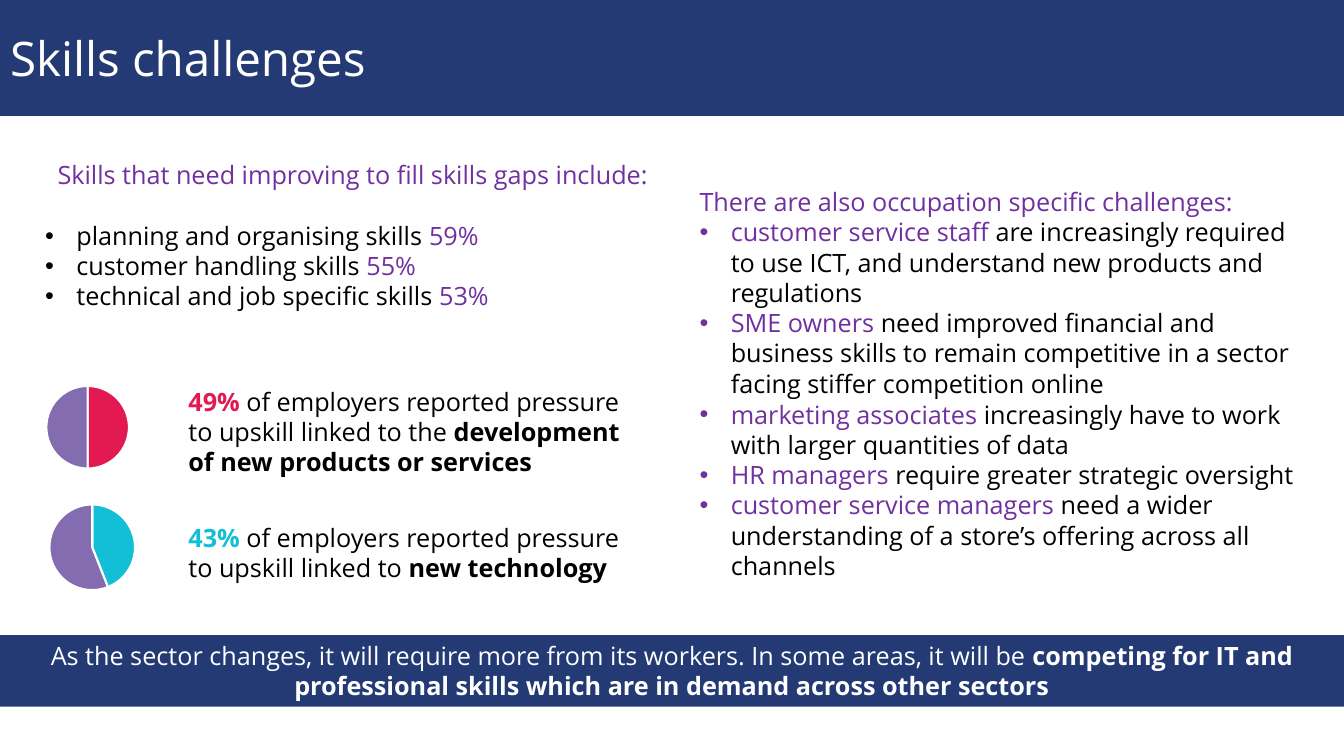
from lxml import etree
from pptx import Presentation
from pptx.chart.data import CategoryChartData
from pptx.dml.color import RGBColor
from pptx.enum.chart import XL_CHART_TYPE
from pptx.enum.shapes import MSO_SHAPE
from pptx.enum.text import MSO_ANCHOR, MSO_AUTO_SIZE, PP_ALIGN
from pptx.oxml import parse_xml
from pptx.oxml.ns import nsdecls, qn
from pptx.util import Inches, Pt

FONT = "Open Sans"
WIDTH, HEIGHT = 13.33, 7.5
COLORS = {name: RGBColor.from_string(value) for name, value in {
    "navy": "233A75", "white": "FFFFFF", "black": "000000", "purple": "7030A0",
    "red": "E31A52", "cyan": "12BFD6", "violet": "836DB0",
}.items()}

presentation = Presentation()
presentation.slide_width, presentation.slide_height = Inches(WIDTH), Inches(HEIGHT)
slide = presentation.slides.add_slide(presentation.slide_layouts[5])


def add_runs(paragraph, runs, size=18):
    """Append (text, color name, bold) runs to the paragraph."""
    for text, color, bold in runs:
        run = paragraph.add_run()
        run.text = text
        run.font.name = FONT
        run.font.size = Pt(size)
        run.font.bold = bold
        run.font.color.rgb = COLORS[color]


def add_text(left, top, width, height, heading, bullets=()):
    """Add a text box with an optional heading paragraph, then bulleted ones."""
    frame = slide.shapes.add_textbox(
        Inches(left), Inches(top), Inches(width), Inches(height)).text_frame
    frame.word_wrap = True
    paragraph = frame.paragraphs[0]
    add_runs(paragraph, heading)
    for index, runs in enumerate(bullets):
        if heading or index:
            paragraph = frame.add_paragraph()
        add_runs(paragraph, runs)
        properties = paragraph._p.get_or_add_pPr()
        properties.set("marL", str(Inches(0.31)))
        properties.set("indent", str(-Inches(0.31)))
        etree.SubElement(properties, qn("a:buFont")).set("typeface", "Arial")
        etree.SubElement(properties, qn("a:buChar")).set("char", "•")
    return frame


# Title band
title = slide.shapes.title
title.left = title.top = 0
title.width, title.height = Inches(WIDTH), Inches(1.15)
title.fill.solid()
title.fill.fore_color.rgb = COLORS["navy"]
title.text_frame.auto_size = MSO_AUTO_SIZE.NONE
title.text_frame.vertical_anchor = MSO_ANCHOR.MIDDLE
title.text_frame.paragraphs[0].alignment = PP_ALIGN.LEFT
add_runs(title.text_frame.paragraphs[0], [("Skills challenges", "white", False)], 34)

# Skills gaps
gaps = [("planning and organising skills ", "59%"),
        ("customer handling skills ", "55%"),
        ("technical and job specific skills ", "53%")]
gaps_frame = add_text(
    0.35, 1.53, 6.3, 1.62,
    [("Skills that need improving to fill skills gaps include:", "purple", False)],
    [[(skill, "black", False), (share, "purple", False)] for skill, share in gaps])
gaps_frame.paragraphs[0].alignment = PP_ALIGN.CENTER
gaps_frame.paragraphs[0].space_after = Pt(22)

# Pressure to upskill: pie position, pie diameter, values, color, text position, text
pressures = [
    ((0.18, 3.69, 1.38, 1.1), 0.82, (50, 50), "red", (3.78, 1.01), "49% ",
     "of employers reported pressure to upskill linked to the ",
     "development of new products or services"),
    ((0.35, 4.8, 1.13, 1.26), 0.85, (44, 56), "cyan", (5.13, 0.71), "43% ",
     "of employers reported pressure to upskill linked to ", "new technology"),
]
for box, diameter, values, color, (top, height), share, statement, reason in pressures:
    chart_data = CategoryChartData()
    chart_data.categories = ["1", "2"]
    chart_data.add_series("Series 1", values)
    chart = slide.shapes.add_chart(
        XL_CHART_TYPE.PIE, *[Inches(length) for length in box], chart_data).chart
    chart.has_title = chart.has_legend = False
    chart.font.name = FONT
    chart.font.size = Pt(10)
    chart.font.color.rgb = COLORS["black"]
    pie = chart.plots[0]
    pie.vary_by_categories = False
    for index, name in enumerate((color, "violet")):
        point_format = pie.series[0].points[index].format
        point_format.fill.solid()
        point_format.fill.fore_color.rgb = COLORS[name]
        point_format.line.color.rgb = COLORS["white"]
        point_format.line.width = Pt(1.5)
    across, down = diameter / box[2], diameter / box[3]
    plot_area = chart._chartSpace.chart.plotArea
    for layout in plot_area.findall(qn("c:layout")):
        plot_area.remove(layout)
    plot_area.insert(0, parse_xml(
        f'<c:layout {nsdecls("c")}><c:manualLayout><c:layoutTarget val="inner"/>'
        '<c:xMode val="edge"/><c:yMode val="edge"/>'
        f'<c:x val="{(1 - across) / 2:.3f}"/><c:y val="{(1 - down) / 2:.3f}"/>'
        f'<c:w val="{across:.3f}"/><c:h val="{down:.3f}"/>'
        '</c:manualLayout></c:layout>'))
    add_text(1.77, top, 4.48, height, [
        (share, color, True), (statement, "black", False), (reason, "black", True)])

# Occupation specific challenges
occupations = [
    ("customer service staff ",
     "are increasingly required to use ICT, and understand new products and regulations"),
    ("SME owners ",
     "need improved financial and business skills to remain competitive in a sector "
     "facing stiffer competition online"),
    ("marketing associates ", "increasingly have to work with larger quantities of data"),
    ("HR managers ", "require greater strategic oversight"),
    ("customer service managers ",
     "need a wider understanding of a store’s offering across all channels"),
]
challenges = [[(who, "purple", False), (need, "black", False)] for who, need in occupations]
add_text(6.84, 1.8, 6.14, 2.22,
         [("There are also occupation specific challenges:", "purple", False)],
         challenges[:2])
add_text(6.84, 3.91, 6.2, 2.22, [], challenges[2:])

# Conclusion band
band = slide.shapes.add_shape(
    MSO_SHAPE.RECTANGLE, 0, Inches(6.3), Inches(WIDTH), Inches(0.71))
band.shadow.inherit = False
band.fill.solid()
band.fill.fore_color.rgb = COLORS["navy"]
band.line.fill.background()
band.text_frame.word_wrap = True
band.text_frame.vertical_anchor = MSO_ANCHOR.TOP
conclusion = band.text_frame.paragraphs[0]
conclusion.alignment = PP_ALIGN.CENTER
add_runs(conclusion, [
    ("As the sector changes, it will require more from its workers. "
     "In some areas, it will be ", "white", False),
    ("competing for IT and professional skills which are in demand across other sectors",
     "white", True)])

presentation.save("out.pptx")
